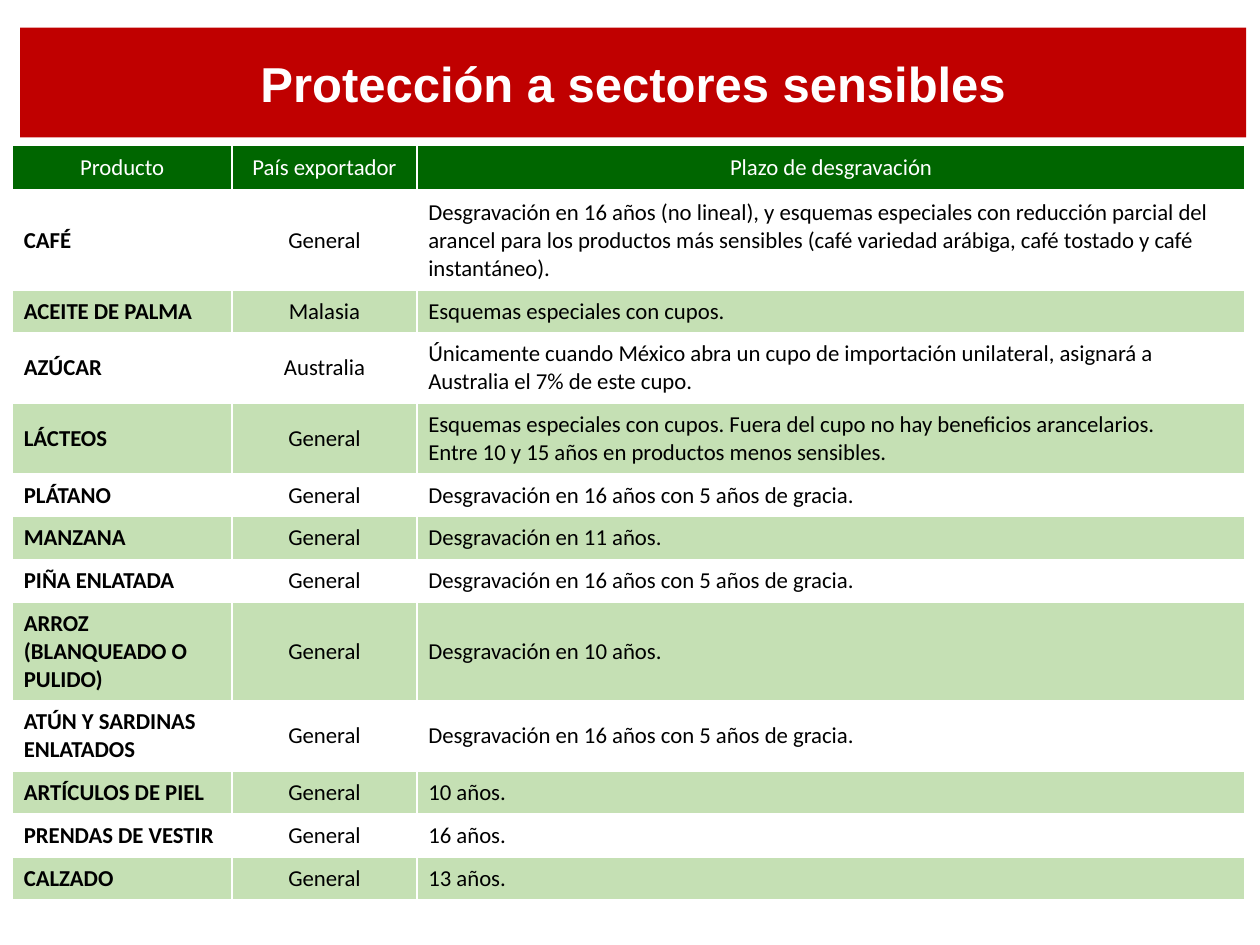
from dataclasses import dataclass

import pptx
import pptx.dml.color
import pptx.enum.shapes
import pptx.enum.text
import pptx.oxml
import pptx.oxml.ns
import pptx.util

Inches = pptx.util.Inches
Pt = pptx.util.Pt
RGBColor = pptx.dml.color.RGBColor
Align = pptx.enum.text.PP_ALIGN
Anchor = pptx.enum.text.MSO_ANCHOR

RED = RGBColor(0xC0, 0x00, 0x00)
DARK_GREEN = RGBColor(0x00, 0x66, 0x00)
LIGHT_GREEN = RGBColor(0xC5, 0xE0, 0xB4)
WHITE = RGBColor(0xFF, 0xFF, 0xFF)
BLACK = RGBColor(0x00, 0x00, 0x00)


@dataclass(frozen=True)
class TextStyle:
    font: str
    size: float
    color: RGBColor
    bold: bool
    align: Align


@dataclass(frozen=True)
class Product:
    name: str
    exporter: str
    terms: str
    height: float = 0.31


TITLE = TextStyle("Arial", 28, WHITE, True, Align.CENTER)
HEADER = TextStyle("Calibri", 13, WHITE, False, Align.CENTER)
NAME = TextStyle("Calibri", 13, BLACK, True, Align.LEFT)
EXPORTER = TextStyle("Calibri", 13, BLACK, False, Align.CENTER)
TERMS = TextStyle("Calibri", 13, BLACK, False, Align.LEFT)

HEADINGS = ("Producto", "País exportador", "Plazo de desgravación")
HEADER_HEIGHT = 0.37
COLUMN_WIDTHS = (1.74, 1.47, 6.57)
SIXTEEN_YEARS = "Desgravación en 16 años con 5 años de gracia."
PRODUCTS = (
    Product(
        "CAFÉ",
        "General",
        "Desgravación en 16 años (no lineal), y esquemas especiales con reducción "
        "parcial del arancel para los productos más sensibles (café variedad arábiga, "
        "café tostado y café instantáneo).",
        0.51,
    ),
    Product("ACEITE DE PALMA", "Malasia", "Esquemas especiales con cupos."),
    Product(
        "AZÚCAR",
        "Australia",
        "Únicamente cuando México abra un cupo de importación unilateral, "
        "asignará a Australia el 7% de este cupo.",
        0.49,
    ),
    Product(
        "LÁCTEOS",
        "General",
        "Esquemas especiales con cupos. Fuera del cupo no hay beneficios arancelarios.\n"
        "Entre 10 y 15 años en productos menos sensibles.",
        0.51,
    ),
    Product("PLÁTANO", "General", SIXTEEN_YEARS),
    Product("MANZANA", "General", "Desgravación en 11 años."),
    Product("PIÑA ENLATADA", "General", SIXTEEN_YEARS),
    Product("ARROZ (BLANQUEADO O PULIDO)", "General", "Desgravación en 10 años.", 0.49),
    Product("ATÚN Y SARDINAS ENLATADOS", "General", SIXTEEN_YEARS, 0.49),
    Product("ARTÍCULOS DE PIEL", "General", "10 años."),
    Product("PRENDAS DE VESTIR", "General", "16 años."),
    Product("CALZADO", "General", "13 años."),
)


def write_text(frame: pptx.text.text.TextFrame, text: str, style: TextStyle) -> None:
    frame.word_wrap = True
    for index, line in enumerate(text.split("\n")):
        para = frame.add_paragraph() if index else frame.paragraphs[0]
        para.alignment = style.align
        span = para.add_run()
        span.text = line
        span.font.name = style.font
        span.font.size = Pt(style.size)
        span.font.bold = style.bold
        span.font.color.rgb = style.color


def add_borders(cell: pptx.table._Cell, top: float, bottom: float) -> None:
    properties = cell._tc.get_or_add_tcPr()
    for side, width in (("L", 1), ("R", 1), ("T", top), ("B", bottom)):
        properties.append(
            pptx.oxml.parse_xml(
                f'<a:ln{side} {pptx.oxml.ns.nsdecls("a")} w="{Pt(width)}">'
                f'<a:solidFill><a:srgbClr val="{WHITE}"/></a:solidFill></a:ln{side}>'
            )
        )


def fill_row(
    table: pptx.table.Table,
    row: int,
    height: float,
    texts: tuple[str, ...],
    styles: tuple[TextStyle, ...],
    color: RGBColor,
) -> None:
    table.rows[row].height = Inches(height)
    for column, (text, style) in enumerate(zip(texts, styles)):
        cell = table.cell(row, column)
        cell.vertical_anchor = Anchor.MIDDLE
        cell.margin_left = cell.margin_right = Inches(0.09)
        cell.margin_top = cell.margin_bottom = Inches(0.06)
        add_borders(cell, 3 if row == 1 else 1, 3 if row == 0 else 1)
        cell.fill.solid()
        cell.fill.fore_color.rgb = color
        write_text(cell.text_frame, text, style)


def add_product_table(page: pptx.slide.Slide) -> None:
    height = HEADER_HEIGHT + sum(product.height for product in PRODUCTS)
    table = page.shapes.add_table(
        len(PRODUCTS) + 1,
        len(COLUMN_WIDTHS),
        Inches(0.1),
        Inches(1.15),
        Inches(sum(COLUMN_WIDTHS)),
        Inches(height),
    ).table
    for column, width in zip(table.columns, COLUMN_WIDTHS):
        column.width = Inches(width)
    fill_row(table, 0, HEADER_HEIGHT, HEADINGS, (HEADER,) * 3, DARK_GREEN)
    for row, product in enumerate(PRODUCTS, start=1):
        texts = (product.name, product.exporter, product.terms)
        color = WHITE if row % 2 else LIGHT_GREEN
        fill_row(table, row, product.height, texts, (NAME, EXPORTER, TERMS), color)


def add_title(page: pptx.slide.Slide) -> None:
    box = page.shapes.add_shape(
        pptx.enum.shapes.MSO_SHAPE.RECTANGLE,
        Inches(0.16),
        Inches(0.22),
        Inches(9.73),
        Inches(0.87),
    )
    box.shadow.inherit = False
    box.fill.solid()
    box.fill.fore_color.rgb = RED
    box.line.fill.background()
    box.text_frame.vertical_anchor = Anchor.MIDDLE
    write_text(box.text_frame, "Protección a sectores sensibles", TITLE)


def main() -> None:
    deck = pptx.Presentation()
    deck.slide_width = Inches(10)
    deck.slide_height = Inches(7.5)
    page = deck.slides.add_slide(deck.slide_layouts[6])
    add_product_table(page)
    add_title(page)
    deck.save("out.pptx")


if __name__ == "__main__":
    main()
